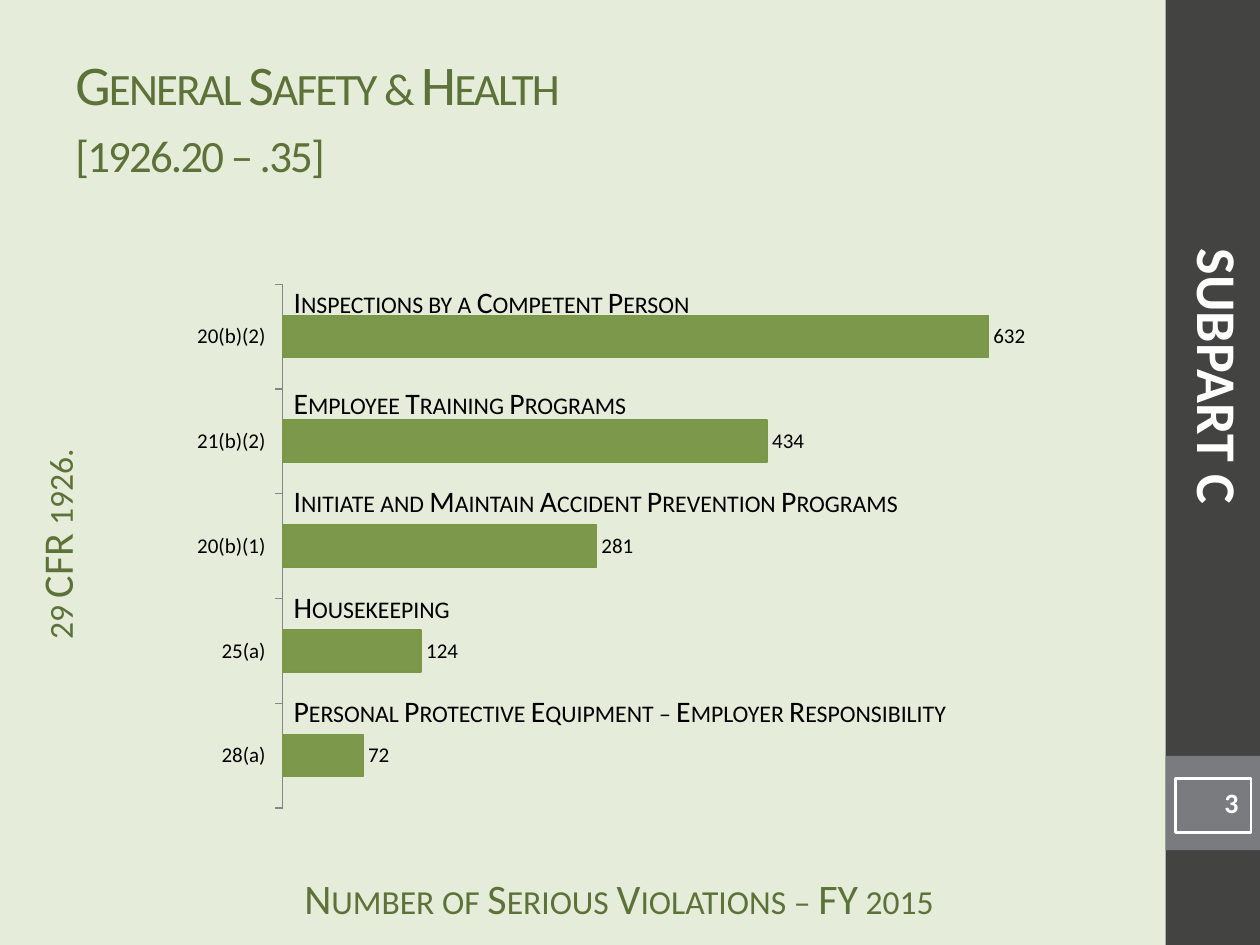
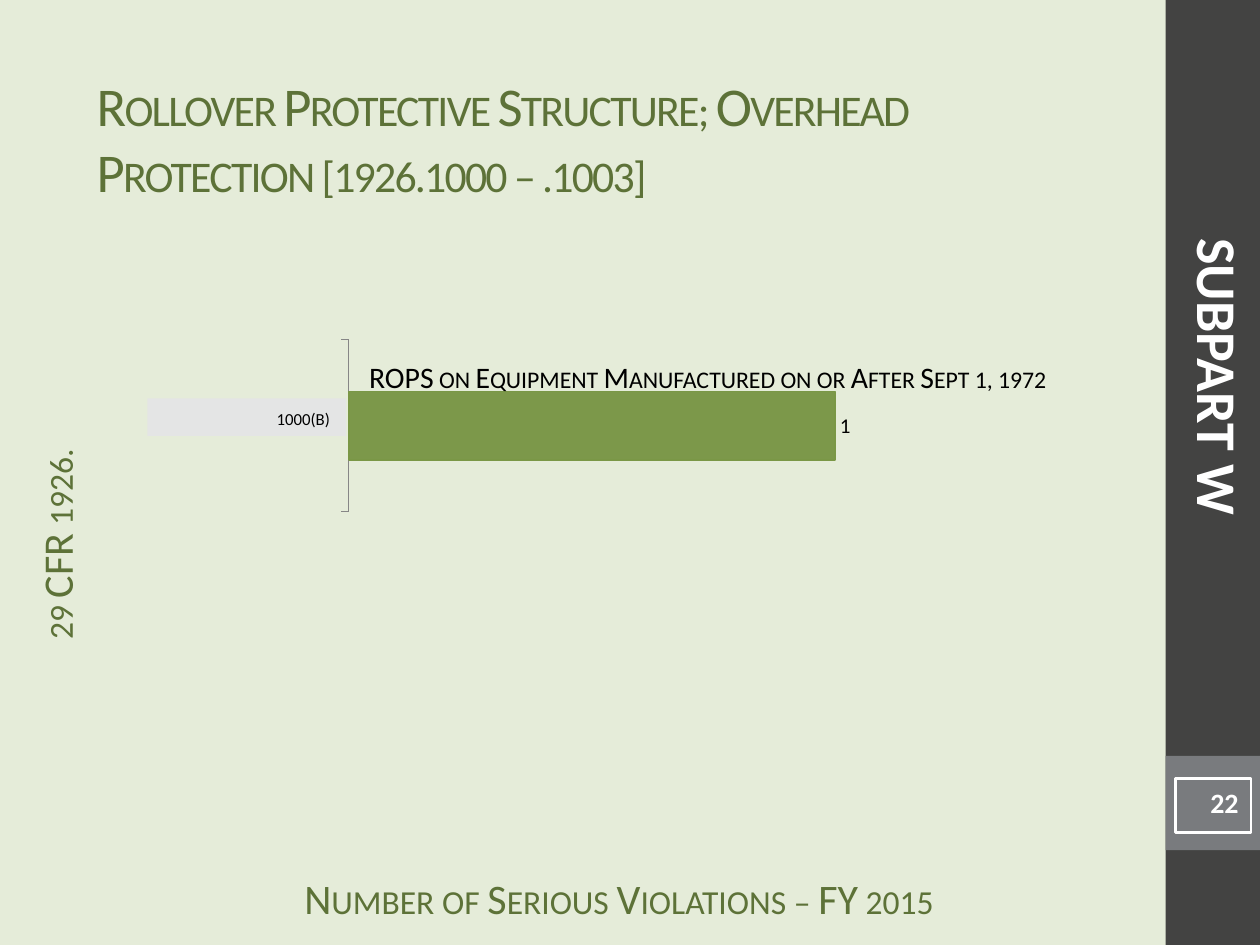
"""Build two slides charting serious violations by subpart."""
from dataclasses import dataclass
from typing import Optional

from pptx import Presentation
from pptx import util as u
from pptx.chart.data import CategoryChartData
from pptx.dml.color import RGBColor
from pptx.enum import chart as ch, shapes, text
from pptx.oxml.ns import qn

FONT = "Calibri"
COLORS = {
    "page": "E5ECD9", "band": "434342", "number_band": "797B7E", "heading": "5D7238",
    "bar": "7C984A", "bar_edge": "7A9746", "axis": "868686", "tag": "E4E5E5",
    "black": "000000", "white": "FFFFFF",
}


@dataclass(frozen=True)
class Box:
    left: float
    top: float
    width: float
    height: float

    def lengths(self) -> tuple:
        return tuple(u.Cm(n) for n in (self.left, self.top, self.width, self.height))


@dataclass(frozen=True)
class TextStyle:
    size: float
    color: str
    small_caps: bool = False
    bold: bool = False
    align: text.PP_ALIGN = text.PP_ALIGN.LEFT
    spacing: int = 0
    anchor: text.MSO_ANCHOR = text.MSO_ANCHOR.TOP
    insets: tuple = (0.25, 0.13, 0.25, 0.13)


@dataclass(frozen=True)
class Violation:
    section: str
    count: int
    description: str
    left: float
    top: float


@dataclass(frozen=True)
class Subpart:
    letter: str
    page: int
    title: str
    title_box: Box
    title_size: float
    chart_box: Box
    axis_max: float
    axis_size: float
    violations: tuple
    tag: Optional[str] = None


CENTER, RIGHT = text.PP_ALIGN.CENTER, text.PP_ALIGN.RIGHT
CAPTION = TextStyle(24, "heading", small_caps=True, align=CENTER, insets=(0.25, 0, 0.25, 0.13))
DESCRIPTION = TextStyle(17, "black", small_caps=True, insets=(0, 0, 0, 0))
SUBPART = TextStyle(32, "white", bold=True, align=CENTER)
PAGE_NUMBER = TextStyle(16, "white", bold=True, align=RIGHT)
TAG = TextStyle(12, "black", small_caps=True, align=RIGHT)

SUBPARTS = (
    Subpart("C", 3, "General Safety & Health\v[1926.20 – .35]",
            Box(1.27, 0.76, 21.16, 3.18), 32, Box(3.61, 5.51, 18.21, 11), 700, 12, (
                Violation("28(a) ", 72, "Personal Protective Equipment – Employer Responsibility",
                          5.92, 13.97),
                Violation("25(a) ", 124, "Housekeeping", 5.92, 11.86),
                Violation("20(b)(1) ", 281, "Initiate and Maintain Accident Prevention Programs",
                          5.92, 9.73),
                Violation("21(b)(2) ", 434, "Employee Training Programs", 5.92, 7.75),
                Violation("20(b)(2) ", 632, "Inspections by a Competent Person", 5.92, 5.72),
            )),
    Subpart("W", 22,
            "Rollover Protective Structure; Overhead Protection [1926.1000 – .1003]",
            Box(1.7, 1.19, 21.16, 3.18), 31.2, Box(6.35, 6.78, 12.7, 3.61), 1.2, 10, (
                Violation("1", 1, "ROPS on Equipment Manufactured on or After Sept 1, 1972",
                          7.44, 7.24),
            ), tag="1000(b) "),
)


def rgb(name: str) -> RGBColor:
    return RGBColor.from_string(COLORS[name])


def write(shape, words: str, style: TextStyle) -> None:
    frame = shape.text_frame
    frame.word_wrap = True
    frame.vertical_anchor = style.anchor
    (frame.margin_left, frame.margin_top,
     frame.margin_right, frame.margin_bottom) = (u.Cm(n) for n in style.insets)
    frame.text = words
    paragraph = frame.paragraphs[0]
    paragraph.alignment = style.align
    font = paragraph.font
    font.name, font.size, font.bold = FONT, u.Pt(style.size), style.bold
    font.color.rgb = rgb(style.color)
    properties = paragraph._p.pPr.find(qn("a:defRPr"))
    if style.small_caps:
        properties.set("cap", "small")
    if style.spacing:
        properties.set("spc", str(style.spacing * 100))


def add_words(slide, box: Box, words: str, style: TextStyle, rotation: float = 0) -> None:
    shape = slide.shapes.add_textbox(*box.lengths())
    shape.rotation = rotation
    write(shape, words, style)


def add_panel(slide, box: Box, fill: Optional[str] = None, line: Optional[str] = None):
    panel = slide.shapes.add_shape(shapes.MSO_SHAPE.RECTANGLE, *box.lengths())
    panel.shadow.inherit = False
    if fill:
        panel.fill.solid()
        panel.fill.fore_color.rgb = rgb(fill)
    else:
        panel.fill.background()
    if line:
        panel.line.color.rgb = rgb(line)
        panel.line.width = u.Pt(1.5)
    else:
        panel.line.fill.background()
    return panel


def add_frame(slide, subpart: Subpart) -> None:
    slide.background.fill.solid()
    slide.background.fill.fore_color.rgb = rgb("page")
    add_panel(slide, Box(23.5, 0, 1.9, 19.05), "band")
    add_panel(slide, Box(23.5, 15.24, 1.9, 1.9), "number_band")
    add_words(slide, Box(5.28, 17.58, 14.4, 0.84), "Number of Serious Violations – FY 2015", CAPTION)
    add_words(slide, Box(-3.96, 10.24, 10.64, 1.47), "29 CFR 1926.", CAPTION, 270)
    number = add_panel(slide, Box(23.7, 15.7, 1.52, 1.09), line="white")
    write(number, str(subpart.page), PAGE_NUMBER)
    add_words(slide, Box(16.99, 6.78, 15.19, 1.63), f"SUBPART {subpart.letter}", SUBPART, 90)
    heading = TextStyle(subpart.title_size, "heading", small_caps=True, spacing=-1,
                        anchor=text.MSO_ANCHOR.MIDDLE)
    add_words(slide, subpart.title_box, subpart.title, heading)


def add_violation_chart(slide, subpart: Subpart) -> None:
    data = CategoryChartData()
    data.categories = [violation.section for violation in subpart.violations]
    data.add_series("Series 1", [violation.count for violation in subpart.violations])
    chart = slide.shapes.add_chart(
        ch.XL_CHART_TYPE.BAR_CLUSTERED, *subpart.chart_box.lengths(), data).chart
    chart.has_legend = chart.has_title = False
    chart.font.name, chart.font.size = FONT, u.Pt(10)
    chart.font.color.rgb = rgb("black")

    counts, sections = chart.value_axis, chart.category_axis
    counts.visible = counts.has_major_gridlines = False
    counts.minimum_scale, counts.maximum_scale = 0, subpart.axis_max
    sections.major_tick_mark = ch.XL_TICK_MARK.OUTSIDE
    sections.tick_labels.font.size = u.Pt(subpart.axis_size)
    sections.format.line.color.rgb = rgb("axis")

    plot = chart.plots[0]
    plot.gap_width = 150
    plot.vary_by_categories = False
    bars = plot.series[0]
    bars.format.fill.solid()
    bars.format.fill.fore_color.rgb = rgb("bar")
    bars.format.line.color.rgb = rgb("bar_edge")
    bars.format.line.width = u.Pt(1)
    labels = bars.data_labels
    labels.show_value = True
    labels.position = ch.XL_LABEL_POSITION.OUTSIDE_END
    labels.font.size = u.Pt(12)


def add_subpart(deck, subpart: Subpart) -> None:
    slide = deck.slides.add_slide(deck.slide_layouts[6])
    add_frame(slide, subpart)
    add_violation_chart(slide, subpart)
    for violation in subpart.violations:
        add_words(slide, Box(violation.left, violation.top, 16, 0.75),
                  violation.description, DESCRIPTION)
    if subpart.tag:
        write(add_panel(slide, Box(2.97, 8.03, 4.01, 0.76), "tag"), subpart.tag, TAG)


def main() -> None:
    deck = Presentation()
    deck.slide_width, deck.slide_height = u.Cm(25.4), u.Cm(19.05)
    for subpart in SUBPARTS:
        add_subpart(deck, subpart)
    deck.save("out.pptx")


if __name__ == "__main__":
    main()
